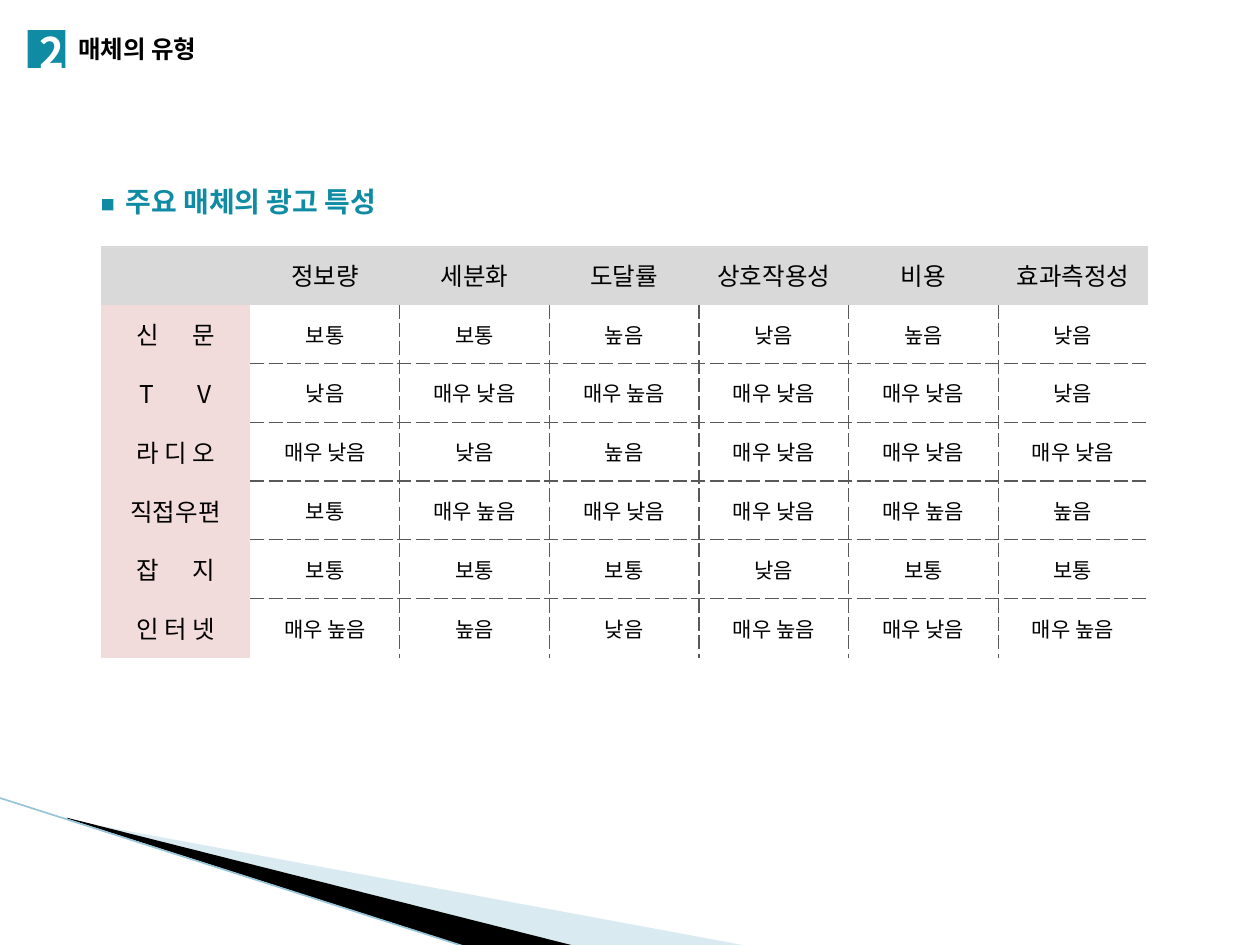
import pptx
import pptx.util
import pptx.dml.color
import pptx.enum.text
import pptx.enum.shapes
import pptx.oxml.ns
import lxml.etree

Pt = pptx.util.Pt
qn = pptx.oxml.ns.qn
Align = pptx.enum.text.PP_ALIGN
Anchor = pptx.enum.text.MSO_ANCHOR
Fit = pptx.enum.text.MSO_AUTO_SIZE

FONT = "Noto Sans CJK KR"
HUES = {"teal": "108BA4", "black": "000000", "white": "FFFFFF", "gray": "D9D9D9",
        "pink": "F2DCDB", "rule": "595959", "sky": "A0CBDC", "line": "97C5D8"}

TITLE = "매체의 유형"
HEADING = "주요 매체의 광고 특성"
NUMBER = "2"
HEADS = ["", "정보량", "세분화", "도달률", "상호작용성", "비용", "효과측정성"]
ROWS = [
    ("신 문", "보통", "보통", "높음", "낮음", "높음", "낮음"),
    ("T V", "낮음", "매우 낮음", "매우 높음", "매우 낮음", "매우 낮음", "낮음"),
    ("라 디 오", "매우 낮음", "낮음", "높음", "매우 낮음", "매우 낮음", "매우 낮음"),
    ("직접우편", "보통", "매우 높음", "매우 낮음", "매우 낮음", "매우 높음", "높음"),
    ("잡 지", "보통", "보통", "보통", "낮음", "보통", "보통"),
    ("인 터 넷", "매우 높음", "높음", "낮음", "매우 높음", "매우 낮음", "매우 높음"),
]
SPREAD = {"신 문": 8, "T V": 11, "잡 지": 8}

WEDGES = [
    ("sky", 40, [(39.6, 468.7), (428.4, 540.7), (328.3, 540.7), (39.6, 468)]),
    ("black", 100, [(38.2, 467.3), (329, 540.7), (267.8, 541.4), (38.9, 468)]),
]
STRIPE = (-0.7, 455.8, 267.1, 541.4)
SQUARES = {"bullet": (58.3, 113.8, 6.5, 6.5), "badge": (15.8, 17.3, 21.6, 21.6)}
GRID = (57.6, 140.4, 598.3, 235.4)
PLAIN = "{2D5ABB26-0587-4C30-8999-92F81FD0307C}"

FRAME = {"word_wrap": True, "vertical_anchor": Anchor.TOP, "auto_size": Fit.SHAPE_TO_FIT_TEXT}
SNUG = {"margin_left": 0, "margin_right": 0, "margin_top": 0, "margin_bottom": 0}
CELL = {"vertical_anchor": Anchor.MIDDLE, "margin_top": 0, "margin_bottom": 0}


def apply(item, style):
    for key, value in style.items():
        setattr(item, key, value)


def rgb(hue):
    return pptx.dml.color.RGBColor.from_string(HUES[hue])


def paint(shape, hue):
    shape.shadow.inherit = False
    shape.fill.solid()
    shape.fill.fore_color.rgb = rgb(hue)
    shape.line.fill.background()


def add_run(para, text, size, hue, bold=False, gap=0):
    run = para.add_run()
    run.text = text
    apply(run.font, {"size": Pt(size), "bold": bold, "name": FONT})
    run.font.color.rgb = rgb(hue)
    props = run.font._element
    lxml.etree.SubElement(props, qn("a:ea"), typeface=FONT)
    if gap:
        props.set("spc", str(gap * 100))


def write(shape, box, text, size, hue, style):
    apply(shape, dict(zip(("left", "top", "width", "height"), map(Pt, box))))
    apply(shape.text_frame, style)
    para = shape.text_frame.paragraphs[0]
    para.alignment = Align.LEFT
    add_run(para, text, size, hue, True)


def add_wedge(shapes, hue, alpha, points):
    spots = [(Pt(x), Pt(y)) for x, y in points]
    pen = shapes.build_freeform(*spots[0], scale=1.0)
    pen.add_line_segments(spots[1:], close=True)
    wedge = pen.convert_to_shape()
    paint(wedge, hue)
    if alpha < 100:
        tone = wedge._element.spPr.find(".//" + qn("a:srgbClr"))
        lxml.etree.SubElement(tone, qn("a:alpha"), val=str(alpha * 1000))


def add_edges(cell, shown):
    props = cell._tc.get_or_add_tcPr()
    for side in "LRTB":
        edge = lxml.etree.SubElement(props, qn("a:ln" + side), w=str(Pt(0.75)))
        if side in shown:
            fill = lxml.etree.SubElement(edge, qn("a:solidFill"))
            lxml.etree.SubElement(fill, qn("a:srgbClr"), val=HUES["rule"])
            lxml.etree.SubElement(edge, qn("a:prstDash"), val="dash")
        else:
            lxml.etree.SubElement(edge, qn("a:noFill"))


def fill_cell(cell, text, row, col, last):
    apply(cell, CELL)
    body = row > 0 and col > 0
    tests = {"L": col > 1, "R": col < last[1], "T": row > 1, "B": row < last[0]}
    add_edges(cell, [side for side, test in tests.items() if body and test])
    if body:
        cell.fill.background()
    else:
        cell.fill.solid()
        cell.fill.fore_color.rgb = rgb("pink" if row else "gray")
    para = cell.text_frame.paragraphs[0]
    para.alignment = Align.CENTER
    size = 12 if body else 14
    if text in SPREAD:
        add_run(para, text[:-1], size, "black", gap=SPREAD[text])
        text = text[-1]
    if text:
        add_run(para, text, size, "black")


def add_grid(shapes):
    data = [HEADS] + ROWS
    high, wide = len(data), len(HEADS)
    table = shapes.add_table(high, wide, *map(Pt, GRID)).table
    apply(table, {"first_row": False, "horz_banding": False})
    table._tbl.tblPr.find(qn("a:tableStyleId")).text = PLAIN
    for col in table.columns:
        col.width = Pt(GRID[2] / wide)
    for row in table.rows:
        row.height = Pt(GRID[3] / high)
    for r, texts in enumerate(data):
        for c, text in enumerate(texts):
            fill_cell(table.cell(r, c), text, r, c, (high - 1, wide - 1))


def main():
    deck = pptx.Presentation()
    apply(deck, {"slide_width": Pt(720), "slide_height": Pt(540)})
    slide = deck.slides.add_slide(deck.slide_layouts[5])
    shapes = slide.shapes

    for wedge in WEDGES:
        add_wedge(shapes, *wedge)
    stripe = shapes.add_connector(pptx.enum.shapes.MSO_CONNECTOR.STRAIGHT, *map(Pt, STRIPE))
    stripe.line.color.rgb = rgb("line")
    stripe.line.width = Pt(0.95)
    lxml.etree.SubElement(stripe._element.spPr, qn("a:effectLst"))

    for box in SQUARES.values():
        paint(shapes.add_shape(pptx.enum.shapes.MSO_SHAPE.RECTANGLE, *map(Pt, box)), "teal")
    add_grid(shapes)

    write(shapes.title, (37.4, 15.8, 195.1, 24.5), TITLE, 14, "black", FRAME)
    for box, text, size, hue, style in [
        ((64.8, 102.2, 200.2, 26.6), HEADING, 16, "teal", FRAME),
        ((22.3, 15.1, 13.7, 28.8), NUMBER, 24, "white", FRAME | SNUG),
    ]:
        write(shapes.add_textbox(0, 0, 0, 0), box, text, size, hue, style)
    deck.save("out.pptx")


if __name__ == "__main__":
    main()
